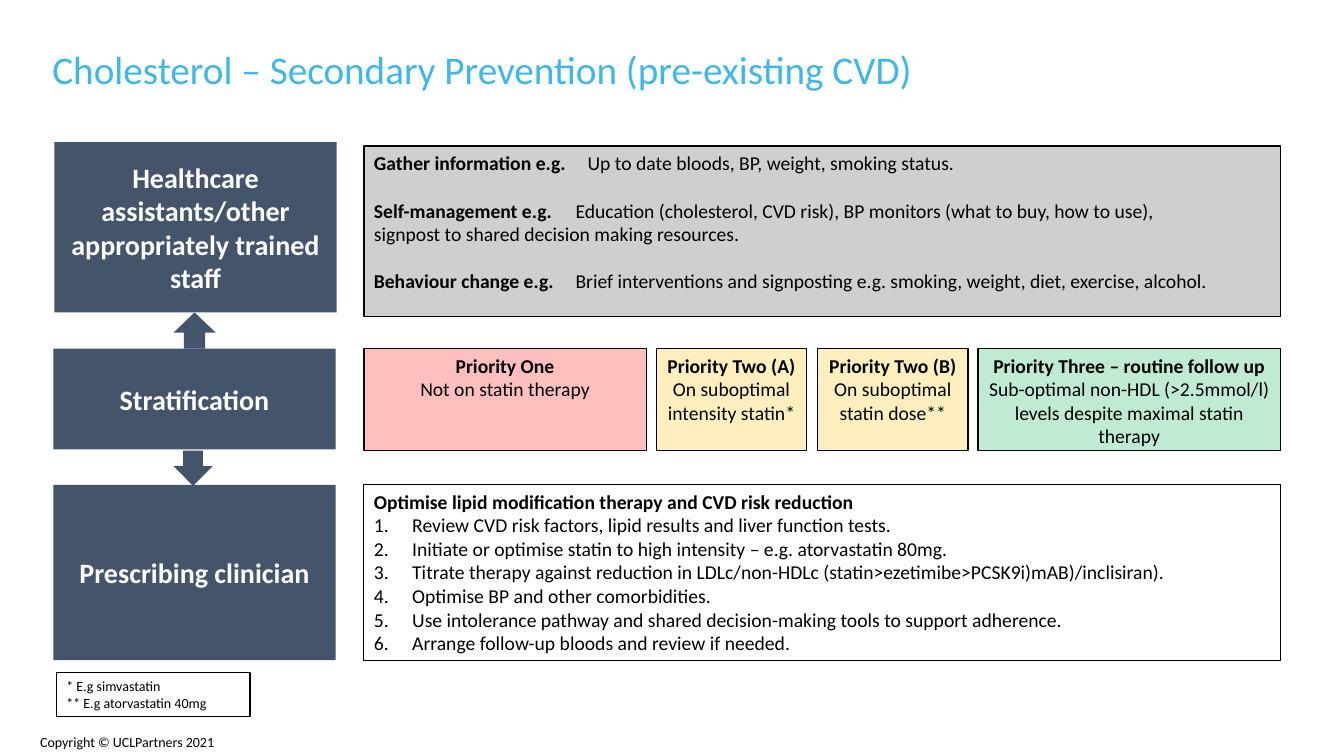
from dataclasses import dataclass

from lxml import etree
from pptx import Presentation
from pptx.dml.color import RGBColor
from pptx.enum import shapes, text
from pptx.oxml import ns
from pptx.util import Inches, Pt

COLOURS = {
    "title": "42B6E6", "navy": "44546A", "grey": "D0CECE", "red": "FF0000",
    "amber": "FFC000", "green": "00B050", "black": "000000", "white": "FFFFFF",
}
FONT = "Calibri"
LEFT, TOP, CENTRE = text.PP_ALIGN.LEFT, text.MSO_ANCHOR.TOP, text.PP_ALIGN.CENTER
MIDDLE = text.MSO_ANCHOR.MIDDLE


@dataclass(frozen=True)
class Para:
    """A bold lead and plain body; tab is the inch stop between them."""
    lead: str = ""
    body: str = ""
    tab: float = 0
    numbered: bool = False
    before: float = 0


@dataclass(frozen=True)
class Panel:
    left: float
    top: float
    width: float
    height: float
    paras: tuple[Para, ...]
    fill: str = ""
    opacity: int = 100
    line: float = 0
    size: int = 14
    ink: str = "black"
    align: text.PP_ALIGN = LEFT
    anchor: text.MSO_ANCHOR = TOP


@dataclass(frozen=True)
class Arrow:
    preset: shapes.MSO_SHAPE
    top: float
    width: float
    height: float


@dataclass(frozen=True)
class Caption:
    left: float
    top: float
    width: float
    height: float
    words: str
    size: int
    ink: str
    inset: float = 0.1


def colour(name: str) -> RGBColor:
    return RGBColor.from_string(COLOURS[name])


def add_run(paragraph, words: str, size: int, ink: str, bold: bool = False) -> None:
    run = paragraph.add_run()
    run.text = words
    for attribute, value in {"name": FONT, "size": Pt(size), "bold": bold}.items():
        setattr(run.font, attribute, value)
    run.font.color.rgb = colour(ink)


def add_xml(parent, tag: str, **attributes: str):
    return etree.SubElement(parent, ns.qn(tag), attributes)


def write_para(paragraph, para: Para, panel: Panel) -> None:
    properties = paragraph._p.get_or_add_pPr()
    if para.numbered:
        indent = Inches(0.38)
        properties.set("marL", str(indent))
        properties.set("indent", str(-indent))
        add_xml(properties, "a:buFont", typeface="+mj-lt")
        add_xml(properties, "a:buAutoNum", type="arabicPeriod")
    if para.tab:
        stops = add_xml(properties, "a:tabLst")
        add_xml(stops, "a:tab", pos=str(Inches(para.tab)), algn="l")
    paragraph.alignment = panel.align
    if para.before:
        paragraph.space_before = Pt(para.before)
    if para.lead:
        lead = para.lead + ("\t" if para.tab else "")
        add_run(paragraph, lead, panel.size, panel.ink, bold=True)
    for number, line in enumerate(para.body.split("\n") if para.body else ()):
        if number:
            paragraph.add_line_break()
        add_run(paragraph, line, panel.size, panel.ink)


def paint(shape, fill: str, opacity: int = 100, line: float = 0) -> None:
    shape.shadow.inherit = False
    if fill:
        shape.fill.solid()
        shape.fill.fore_color.rgb = colour(fill)
        if opacity < 100:
            tint = shape.element.spPr.find(".//" + ns.qn("a:srgbClr"))
            add_xml(tint, "a:alpha", val=str(opacity * 1000))
    else:
        shape.fill.background()
    if line:
        shape.line.color.rgb = colour("black")
        shape.line.width = Pt(line)
    else:
        shape.line.fill.background()


def draw_panel(slide, panel: Panel) -> None:
    box = map(Inches, (panel.left, panel.top, panel.width, panel.height))
    shape = slide.shapes.add_shape(shapes.MSO_SHAPE.RECTANGLE, *box)
    paint(shape, panel.fill, panel.opacity, panel.line)
    frame = shape.text_frame
    for attribute, value in {"word_wrap": True, "vertical_anchor": panel.anchor}.items():
        setattr(frame, attribute, value)
    for number, para in enumerate(panel.paras):
        paragraph = frame.add_paragraph() if number else frame.paragraphs[0]
        write_para(paragraph, para, panel)


def draw_arrow(slide, arrow: Arrow) -> None:
    box = map(Inches, (ARROW_LEFT, arrow.top, arrow.width, arrow.height))
    shape = slide.shapes.add_shape(arrow.preset, *box)
    shape.adjustments[1] = 0.56
    paint(shape, "navy")


def draw_caption(slide, caption: Caption) -> None:
    box = map(Inches, (caption.left, caption.top, caption.width, caption.height))
    frame = slide.shapes.add_textbox(*box).text_frame
    frame.word_wrap = False
    frame.margin_left = Inches(caption.inset)
    add_run(frame.paragraphs[0], caption.words, caption.size, caption.ink)


def priority(left: float, width: float, fill: str, lead: str, body: str) -> Panel:
    return Panel(left, 3.46, width, 1.01, (Para(lead), Para(body=body)), fill, 25, 1,
                 align=CENTRE)


def role(left: float, top: float, height: float, name: str) -> Panel:
    return Panel(left, top, 2.8, height, (Para(name),), "navy", size=20, ink="white",
                 align=CENTRE, anchor=MIDDLE)


ARROW_LEFT = 1.72
CAPTIONS = (
    Caption(0.3, 7.23, 1.96, 0.27, "Copyright © UCLPartners 2021", 10, "black"),
    Caption(0.24, 0.4, 8.9, 0.57, "Cholesterol – Secondary Prevention (pre-existing CVD)",
            28, "title", inset=0.28),
)
SUPPORT = (
    Para("Gather information e.g.", "Up to date bloods, BP, weight, smoking status.", 2.12),
    Para("Self-management e.g.",
         "Education (cholesterol, CVD risk), BP monitors (what to buy, how to use),\n"
         "signpost to shared decision making resources.", 2, before=17),
    Para("Behaviour change e.g.", "Brief interventions and signposting e.g. smoking, "
         "weight, diet, exercise, alcohol.", 2, before=17),
)
STEPS = (
    "Review CVD risk factors, lipid results and liver function tests.",
    "Initiate or optimise statin to high intensity – e.g. atorvastatin 80mg.",
    "Titrate therapy against reduction in LDLc/non-HDLc "
    "(statin>ezetimibe>PCSK9i)mAB)/inclisiran).",
    "Optimise BP and other comorbidities.",
    "Use intolerance pathway and shared decision-making tools to support adherence.",
    "Arrange follow-up bloods and review if needed.",
)
OPTIMISE = (Para("Optimise lipid modification therapy and CVD risk reduction"),
            *(Para(body=step, numbered=True) for step in STEPS))
FOOTNOTES = (Para(body="* E.g simvastatin"), Para(body="** E.g atorvastatin 40mg"))
PANELS = (
    priority(3.61, 2.8, "red", "Priority One", "Not on statin therapy"),
    priority(6.51, 1.49, "amber", "Priority Two (A)", "On suboptimal intensity statin*"),
    priority(8.11, 1.49, "amber", "Priority Two (B)", "On suboptimal statin dose**"),
    priority(9.7, 3, "green", "Priority Three – routine follow up",
             "Sub-optimal non-HDL (>2.5mmol/l) levels despite maximal statin therapy"),
    Panel(3.61, 1.45, 9.09, 1.69, SUPPORT, "grey", line=1),
    Panel(3.61, 4.81, 9.09, 1.74, OPTIMISE, line=0.75),
    role(0.54, 1.41, 1.69, "Healthcare assistants/other appropriately trained staff"),
    role(0.53, 3.46, 1, "Stratification"),
    role(0.53, 4.81, 1.74, "Prescribing clinician"),
    Panel(0.56, 6.67, 1.92, 0.44, FOOTNOTES, line=0.75, size=10),
)
ARROWS = (
    Arrow(shapes.MSO_SHAPE.DOWN_ARROW, 4.47, 0.39, 0.35),
    Arrow(shapes.MSO_SHAPE.UP_ARROW, 3.1, 0.42, 0.36),
)


def main() -> None:
    deck = Presentation()
    deck.slide_width, deck.slide_height = Inches(13.33), Inches(7.5)
    slide = deck.slides.add_slide(deck.slide_layouts[6])
    for draw, items in ((draw_caption, CAPTIONS), (draw_panel, PANELS), (draw_arrow, ARROWS)):
        for item in items:
            draw(slide, item)
    deck.save("out.pptx")


if __name__ == "__main__":
    main()
